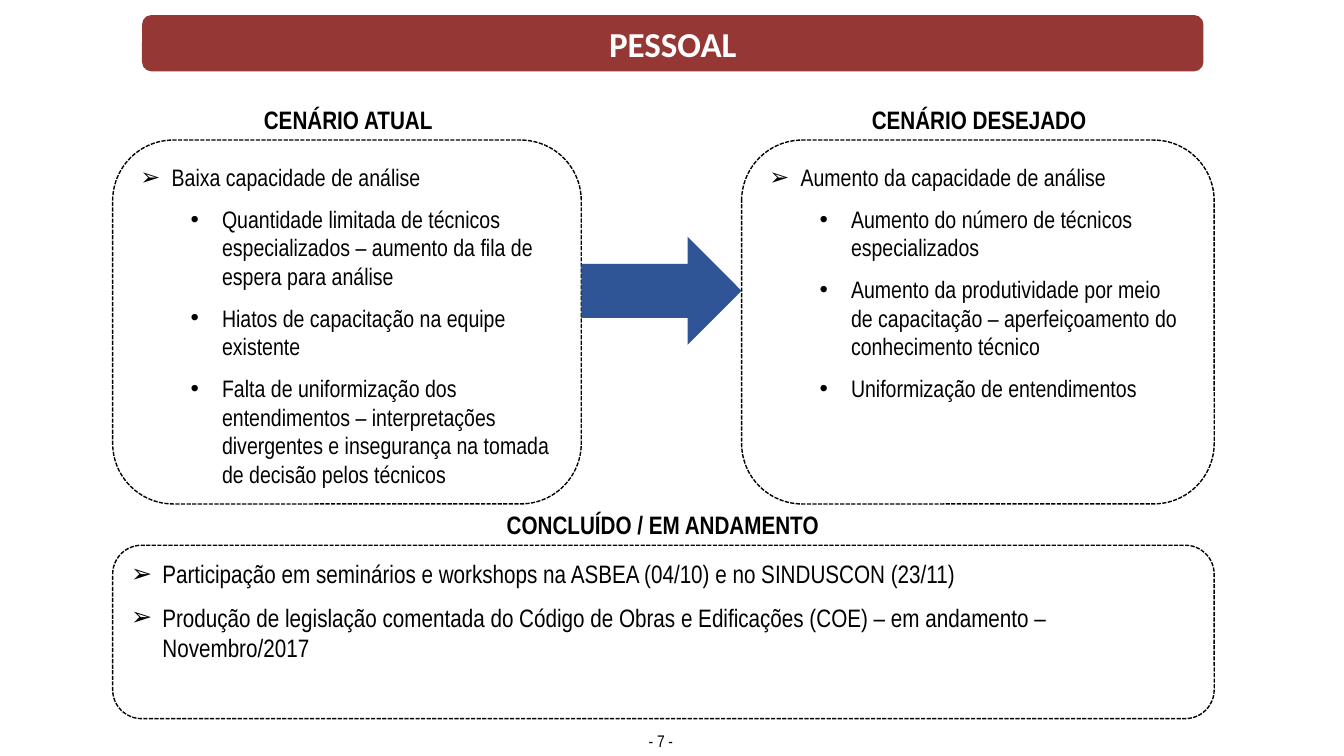
from dataclasses import dataclass

from lxml.etree import SubElement
from pptx import Presentation
from pptx.dml.color import RGBColor
from pptx.enum.dml import MSO_LINE
from pptx.enum.shapes import MSO_SHAPE as Preset
from pptx.enum.text import MSO_ANCHOR as Anchor, PP_ALIGN as Align
from pptx.oxml.ns import qn
from pptx.util import Cm, Pt

BLACK, WHITE, RED, BLUE = "000000", "FFFFFF", "953735", "2F5597"
BODY_FONT, TITLE_FONT = "Arial Narrow", "Calibri"
HANG = 0.79
LEVEL_STEP = 1.27
BULLETS = ("➢", "•")


@dataclass
class Frame:
    left: float
    top: float
    width: float
    height: float

    def lengths(self) -> tuple:
        return Cm(self.left), Cm(self.top), Cm(self.width), Cm(self.height)


@dataclass
class Panel:
    heading: str
    heading_frame: Frame
    frame: Frame
    size: int
    items: list[tuple[int, str]]  # level, wording


def color(value: str) -> RGBColor:
    return RGBColor.from_string(value)


def style(para, size: float, hue: str = BLACK, font: str = BODY_FONT, bold: bool = False) -> None:
    for span in para.runs:
        span.font.size = Pt(size)
        span.font.name = font
        span.font.bold = bold
        span.font.color.rgb = color(hue)


def add_shape(page, preset, frame: Frame, fill: str | None = None):
    """Add a shape with a plain fill, or with a dashed outline if it has no fill."""
    shape = page.shapes.add_shape(preset, *frame.lengths())
    shape.shadow.inherit = False
    if fill:
        shape.fill.solid()
        shape.fill.fore_color.rgb = color(fill)
        shape.line.fill.background()
    else:
        shape.fill.background()
        shape.line.color.rgb = color(BLACK)
        shape.line.width = Pt(1)
        shape.line.dash_style = MSO_LINE.SQUARE_DOT
    return shape


def add_label(page, frame: Frame, text: str, size: float, bold: bool, align) -> None:
    box = page.shapes.add_textbox(*frame.lengths())
    box.text_frame.word_wrap = False
    box.text_frame.text = text
    para = box.text_frame.paragraphs[0]
    para.alignment = align
    style(para, size, bold=bold)


def set_bullet(para, level: int) -> None:
    para.level = level
    properties = para._p.get_or_add_pPr()
    properties.set("marL", str(Cm(HANG + level * LEVEL_STEP)))
    properties.set("indent", str(-Cm(HANG)))
    SubElement(properties, qn("a:buFont"), typeface="Arial")
    SubElement(properties, qn("a:buChar"), char=BULLETS[level])


def add_panel(page, panel: Panel) -> None:
    add_label(page, panel.heading_frame, panel.heading, 18, True, Align.LEFT)
    text_frame = add_shape(page, Preset.ROUNDED_RECTANGLE, panel.frame).text_frame
    text_frame.word_wrap = True
    text_frame.vertical_anchor = Anchor.TOP
    text_frame.text = "\n".join(text for _, text in panel.items)
    for index, (para, (level, _)) in enumerate(zip(text_frame.paragraphs, panel.items)):
        para.alignment = Align.LEFT
        para.space_before = Pt(9.4 if index else 0)
        set_bullet(para, level)
        style(para, panel.size)


PANELS = [
    Panel("CENÁRIO ATUAL", Frame(6.4, 2.51, 4.8, 1.02), Frame(2.84, 3.53, 11.81, 9.17), 17, [
        (0, "Baixa capacidade de análise"),
        (1, "Quantidade limitada de técnicos especializados – aumento da fila de espera para análise"),
        (1, "Hiatos de capacitação na equipe existente"),
        (1, "Falta de uniformização dos entendimentos – interpretações divergentes "
            "e insegurança na tomada de decisão pelos técnicos"),
    ]),
    Panel("CENÁRIO DESEJADO", Frame(21.72, 2.51, 5.97, 1.02), Frame(18.69, 3.53, 11.91, 9.17), 17, [
        (0, "Aumento da capacidade de análise"),
        (1, "Aumento do número de técnicos especializados"),
        (1, "Aumento da produtividade por meio de capacitação – aperfeiçoamento do conhecimento técnico"),
        (1, "Uniformização de entendimentos"),
    ]),
    Panel("CONCLUÍDO / EM ANDAMENTO", Frame(12.52, 12.7, 8.46, 1.02), Frame(2.84, 13.74, 27.76, 4.37), 18, [
        (0, "Participação em seminários e workshops na ASBEA (04/10) e no SINDUSCON (23/11)"),
        (0, "Produção de legislação comentada do Código de Obras e Edificações (COE) "
            "– em andamento – Novembro/2017"),
    ]),
]


def main() -> None:
    deck = Presentation()
    deck.slide_width, deck.slide_height = Cm(33.87), Cm(19.05)
    page = deck.slides.add_slide(deck.slide_layouts[6])

    # Title banner
    banner = add_shape(page, Preset.ROUNDED_RECTANGLE, Frame(3.58, 0.38, 26.75, 1.42), RED)
    banner.text_frame.text = "PESSOAL"
    banner.text_frame.vertical_anchor = Anchor.MIDDLE
    title = banner.text_frame.paragraphs[0]
    title.alignment = Align.CENTER
    style(title, 25, WHITE, TITLE_FONT, True)

    # Panels with their headings
    for panel in PANELS:
        add_panel(page, panel)

    # Arrow filling the gap between the two scenarios
    current, desired = PANELS[0].frame, PANELS[1].frame
    start = current.left + current.width
    add_shape(page, Preset.RIGHT_ARROW, Frame(start, 5.97, desired.left - start, 2.72), BLUE)

    # Page number
    add_label(page, Frame(15.88, 18.29, 1.55, 1.02), "- 7 -", 12, False, Align.CENTER)

    deck.save("out.pptx")


if __name__ == "__main__":
    main()
